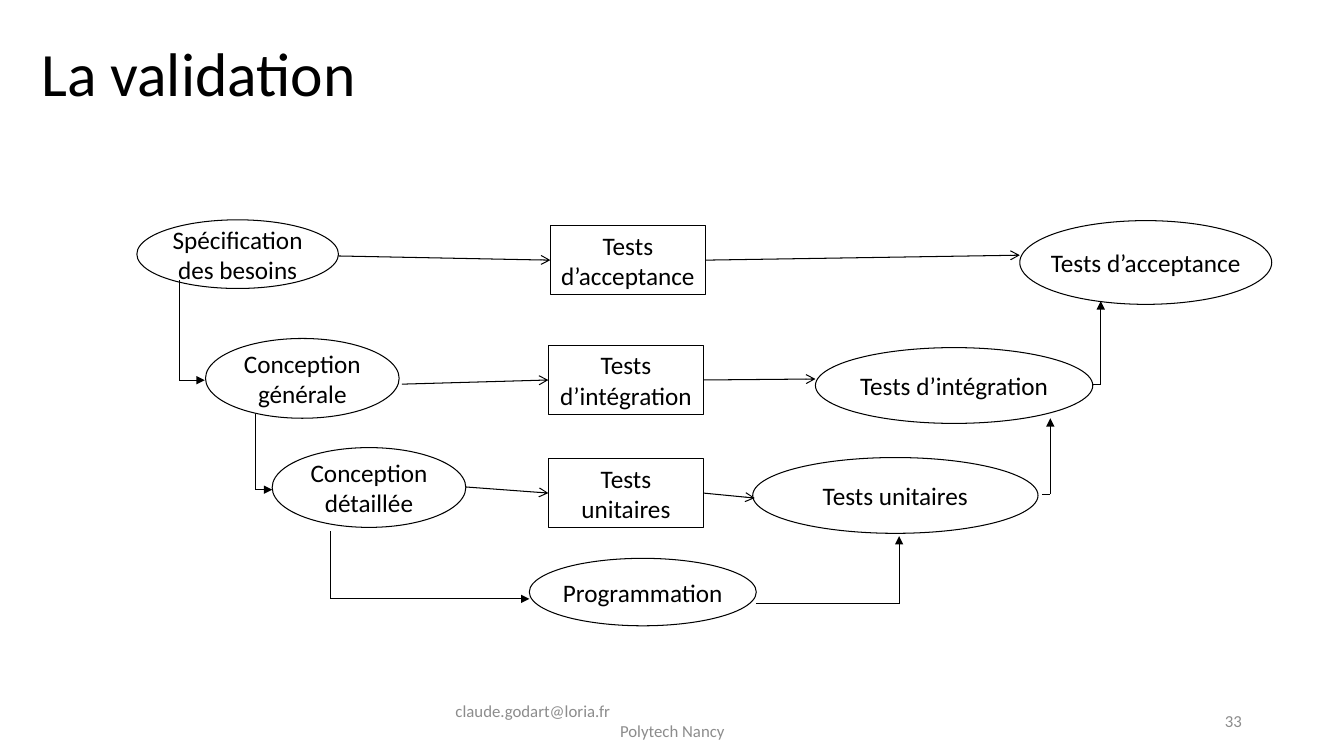
import pptx
import pptx.util
import pptx.dml.color
import pptx.enum.shapes
import pptx.enum.text
import pptx.oxml
import pptx.oxml.ns
import lxml.etree

Cm, Pt = pptx.util.Cm, pptx.util.Pt
SHAPE = pptx.enum.shapes.MSO_SHAPE
ALIGN = pptx.enum.text.PP_ALIGN

COLORS = {"ink": "000000", "muted": "8C8C8C"}
FONT = "Calibri"

TITLE = ("La validation", (0.79, -0.03, 29.21, 3.68))
FOOTER = ("claude.godart@loria.fr\nPolytech Nancy", (11.23, 17.65, 11.43, 1.02))
NUMBER = ("33", (23.93, 17.65, 7.62, 1.02))

STAGES = [
    ("Spécification des besoins", (3.45, 5.54, 5.08, 1.73), True),
    ("Conception générale", (5.18, 8.53, 4.88, 2.01), True),
    ("Conception détaillée", (6.86, 11.28, 4.88, 2.01), True),
    ("Programmation", (13.34, 14.07, 5.72, 1.7), False),
    ("Tests unitaires", (18.97, 11.53, 7.19, 1.91), False),
    ("Tests d’intégration", (20.55, 8.76, 6.99, 1.91), False),
    ("Tests d’acceptance", (25.7, 5.56, 6.35, 2.11), False),
]
TEST_SIZE = (3.91, 1.73)
TESTS = [
    ("Tests d’acceptance", (13.87, 5.69), (8.53, 6.45), (25.7, 6.43)),
    ("Tests d’intégration", (13.82, 8.71), (10.13, 9.68), (20.55, 9.55)),
    ("Tests unitaires", (13.82, 11.56), (11.73, 12.27), (19.02, 12.55)),
]
ELBOWS = [
    ((4.52, 7.06), (4.52, 9.58), (5.16, 9.58)),
    ((6.43, 10.44), (6.43, 12.34), (6.86, 12.34)),
    ((8.33, 13.39), (8.33, 15.09), (13.34, 15.09)),
    ((19.05, 15.21), (22.66, 15.21), (22.66, 13.51)),
    ((26.26, 12.45), (26.47, 12.45), (26.47, 10.54)),
    ((27.53, 9.7), (27.74, 9.7), (27.74, 7.59)),
]


def rgb(name):
    return pptx.dml.color.RGBColor.from_string(COLORS[name])


def write(s, text, size, color, align, inset, wrap=True):
    tf = s.text_frame
    tf.text = text
    tf.word_wrap = wrap
    tf.vertical_anchor = pptx.enum.text.MSO_ANCHOR.MIDDLE
    tf.margin_left = tf.margin_right = Cm(inset)
    tf.margin_top = tf.margin_bottom = 0
    for p in tf.paragraphs:
        p.alignment = align
        for r in p.runs:
            r.font.name, r.font.size = FONT, Pt(size)
            r.font.color.rgb = rgb(color)
    return tf


def add_text(slide, label, size, color, align):
    text, box = label
    s = slide.shapes.add_textbox(*map(Cm, box))
    return write(s, text, size, color, align, 0.25)


def add_node(slide, kind, text, box, weight, inset, wrap=True):
    s = slide.shapes.add_shape(kind, *map(Cm, box))
    s.shadow.inherit = False
    s.fill.background()
    s.line.color.rgb = rgb("ink")
    s.line.width = Pt(weight)
    write(s, text, 18, "ink", ALIGN.CENTER, inset, wrap)
    return s


def add_line(slide, start, end, head=None):
    c = slide.shapes.add_connector(
        pptx.enum.shapes.MSO_CONNECTOR.STRAIGHT, *map(Cm, start + end))
    c.line.color.rgb = rgb("ink")
    c.line.width = Pt(0.75)
    qn = pptx.oxml.ns.qn
    if head:
        lxml.etree.SubElement(c.line._get_or_add_ln(), qn("a:tailEnd"), type=head)
    lxml.etree.SubElement(c._element.spPr, qn("a:effectLst"))
    return c


def main():
    """Build the validation slide and save it."""
    prs = pptx.Presentation()
    prs.slide_width, prs.slide_height = Cm(33.87), Cm(19.05)
    slide = prs.slides.add_slide(prs.slide_layouts[6])

    add_text(slide, TITLE, 44, "ink", ALIGN.LEFT)
    add_text(slide, NUMBER, 12, "muted", ALIGN.RIGHT)
    footer = add_text(slide, FOOTER, 12, "muted", ALIGN.CENTER)
    footer.paragraphs[0].alignment = ALIGN.LEFT

    for text, box, wrap in STAGES:
        add_node(slide, SHAPE.OVAL, text, box, 0.75, 0, wrap)

    for start, corner, end in ELBOWS:
        add_line(slide, start, corner)
        add_line(slide, corner, end, "triangle")

    for text, corner, source, target in TESTS:
        test = add_node(slide, SHAPE.RECTANGLE, text, corner + TEST_SIZE, 1, 0.2)
        add_line(slide, source, corner, "arrow").end_connect(test, 1)
        add_line(slide, corner, target, "arrow").begin_connect(test, 3)

    prs.save("out.pptx")


if __name__ == "__main__":
    main()
